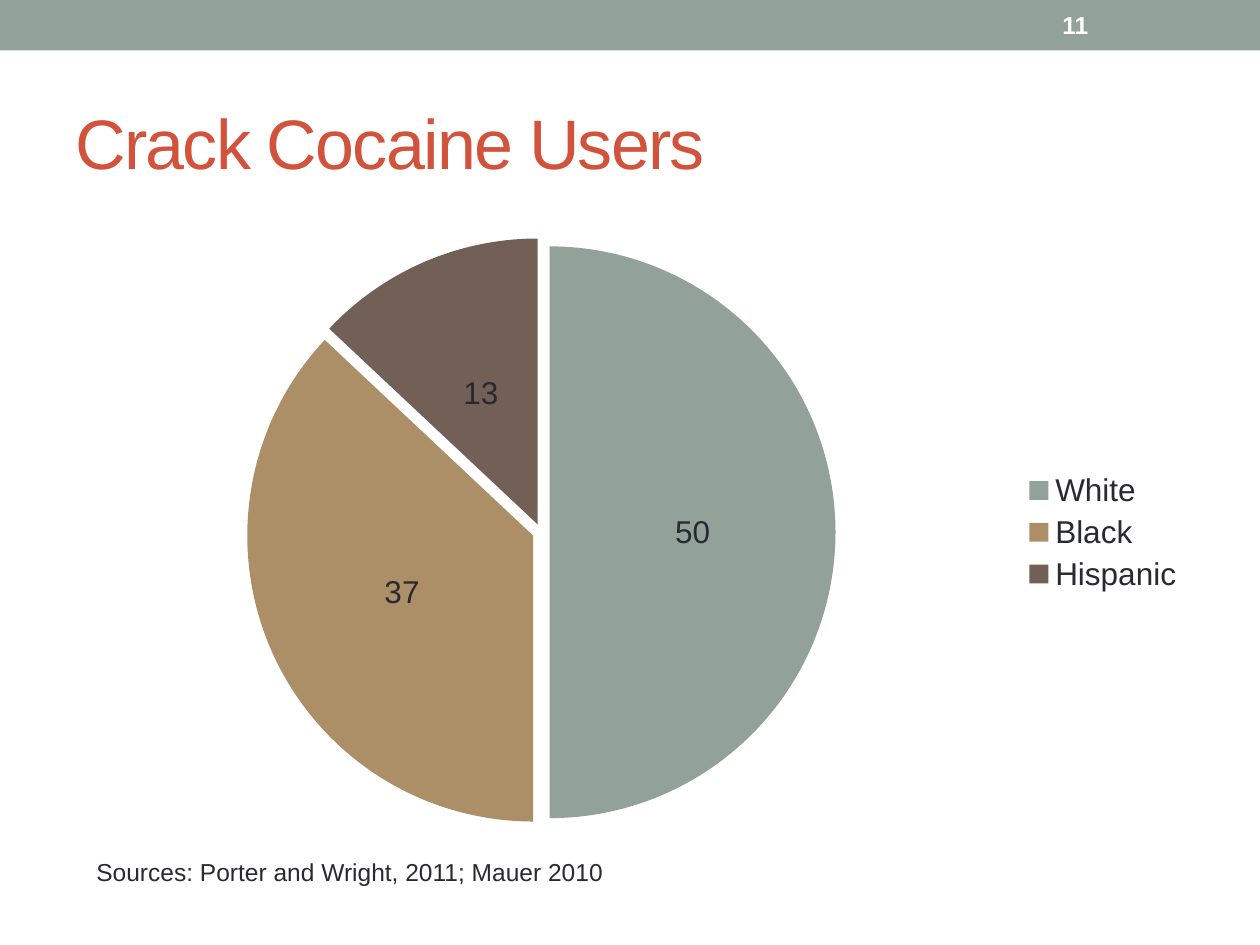
from lxml import etree
from pptx import Presentation
from pptx import util as u
from pptx.chart import data as chart_data
from pptx.dml.color import RGBColor
from pptx.enum import chart as charts, shapes, text
from pptx.oxml import ns

SAGE = RGBColor(0x93, 0xA2, 0x99)
TAN = RGBColor(0xAD, 0x8F, 0x67)
BROWN = RGBColor(0x72, 0x60, 0x56)
RED = RGBColor(0xD2, 0x53, 0x3C)
INK = RGBColor(0x29, 0x29, 0x34)
WHITE = RGBColor(0xFF, 0xFF, 0xFF)


def set_font(font, color, **values):
    font.name = "Arial"
    font.color.rgb = color
    for name, value in values.items():
        setattr(font, name, value)


deck = Presentation()
deck.slide_width, deck.slide_height = u.Pt(720), u.Pt(540)
page = deck.slides.add_slide(deck.slide_layouts[6])

band = page.shapes.add_shape(shapes.MSO_SHAPE.RECTANGLE, 0, 0, u.Pt(720), u.Pt(28.8))
band.shadow.inherit = False
band.fill.solid()
band.fill.fore_color.rgb = SAGE
band.line.fill.background()

middle, top = text.MSO_ANCHOR.MIDDLE, text.MSO_ANCHOR.TOP
texts = [
    ("Crack Cocaine Users", (36, 41.76, 648, 77.76), middle, RED,
     {"size": u.Pt(40)}, -1),
    ("11", (600, 1.44, 84, 25.92), middle, WHITE,
     {"size": u.Pt(14), "bold": True}, 0),
    ("Sources: Porter and Wright, 2011; Mauer 2010", (48, 486, 618, 24.5), top, INK,
     {"size": u.Pt(14)}, 0),
]
for wording, place, anchor, color, style, spacing in texts:
    box = page.shapes.add_textbox(*map(u.Pt, place))
    box.text_frame.word_wrap = True
    box.text_frame.vertical_anchor = anchor
    span = box.text_frame.paragraphs[0].add_run()
    span.text = wording
    set_font(span.font, color, **style)
    if spacing:
        span.font._element.set("spc", str(spacing * 100))

users = chart_data.CategoryChartData()
users.categories = ["White", "Black", "Hispanic"]
users.add_series("Series 1", (50, 37, 13))
pie = page.shapes.add_chart(
    charts.XL_CHART_TYPE.PIE, u.Pt(36), u.Pt(126), u.Pt(648), u.Pt(356.4), users
).chart
set_font(pie.font, INK, size=u.Pt(18))
pie.has_title = False
pie.has_legend = True
pie.legend.position = charts.XL_LEGEND_POSITION.RIGHT
pie.legend.include_in_layout = False

plot = pie.plots[0]
plot.vary_by_categories = True
series = plot.series[0]
explosion = etree.Element(ns.qn("c:explosion"), val="3")
series._element.find(ns.qn("c:tx")).addnext(explosion)
for index, color in enumerate((SAGE, TAN, BROWN)):
    slice_format = series.points[index].format
    slice_format.fill.solid()
    slice_format.fill.fore_color.rgb = color
    slice_format.line.fill.background()

plot.has_data_labels = True
labels = plot.data_labels
labels.show_value = True
labels.show_percentage = False
labels.position = charts.XL_LABEL_POSITION.CENTER
set_font(labels.font, INK, size=u.Pt(18))

deck.save("out.pptx")
